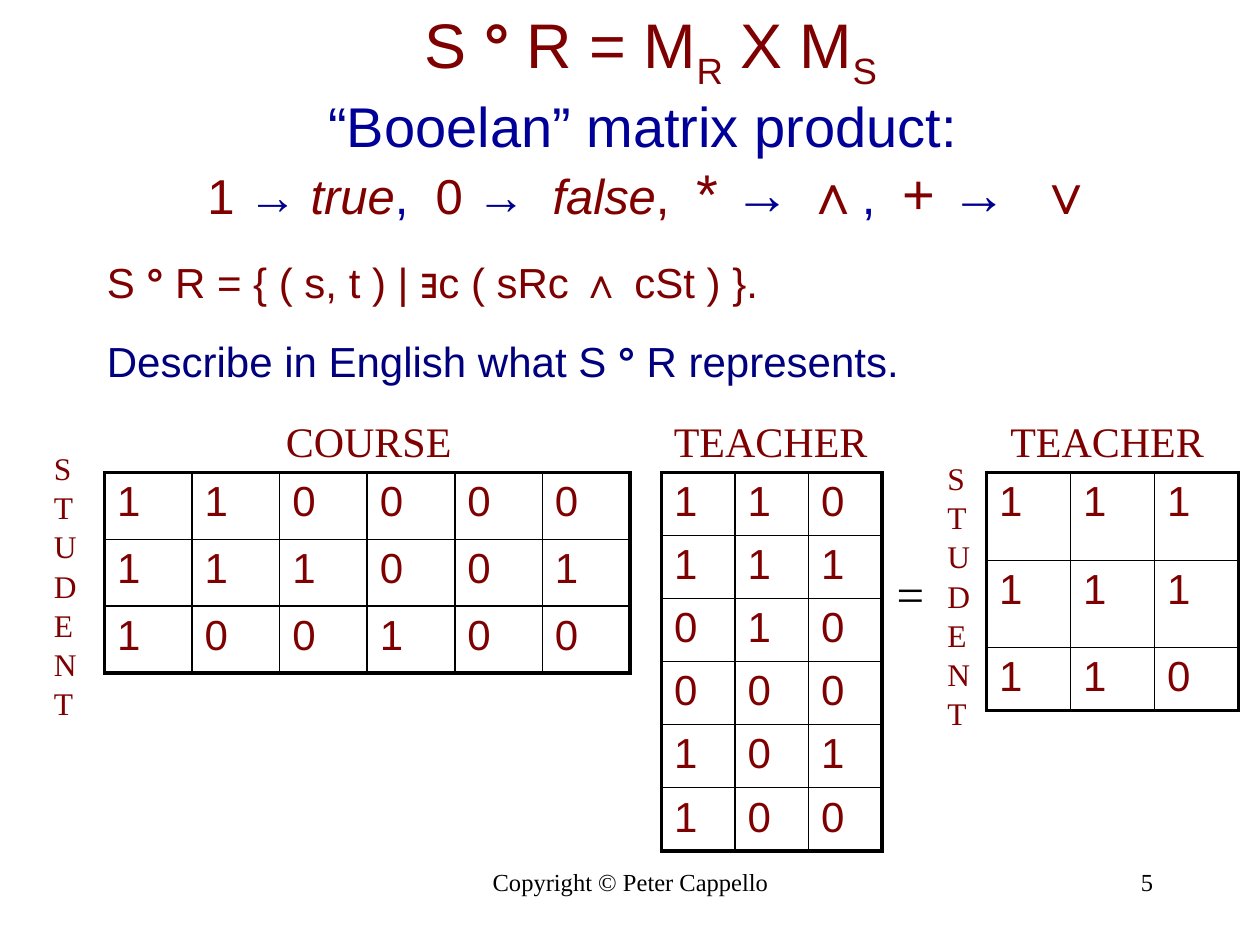
from lxml.etree import SubElement
from pptx import Presentation
from pptx.dml.color import RGBColor
from pptx.enum.text import MSO_ANCHOR, PP_ALIGN
from pptx.oxml.ns import qn
from pptx.util import Inches, Pt

MAROON, DARK_RED = "7F0000", "800000"
BLUE, ARROW_BLUE, NAVY, BLACK = "000099", "000090", "00007F", "000000"
SANS, SERIF = "Arial", "Times New Roman"
THICK, THIN = 2.25, 1


def color(hex_text):
    return RGBColor.from_string(hex_text)


def style_run(run, size, font, hex_color, bold=False, italic=False):
    run.font.size = Pt(size)
    run.font.name = font
    run.font.color.rgb = color(hex_color)
    run.font.bold = bold
    run.font.italic = italic


def add_styled_run(paragraph, text, size, hex_color, marks=""):
    """Marks: b bold, i italic, s subscript."""
    run = paragraph.add_run()
    run.text = text
    style_run(run, size, SANS, hex_color, "b" in marks, "i" in marks)
    if "s" in marks:
        run.font._element.set("baseline", "-25000")


def add_text_box(slide, left, top, width, height, wrap=True):
    box = slide.shapes.add_textbox(Inches(left), Inches(top), Inches(width), Inches(height))
    box.text_frame.word_wrap = wrap
    return box.text_frame


def add_label(slide, box, text, size, hex_color=MAROON, alignment=PP_ALIGN.LEFT,
              wrap=False, line_spacing=None):
    text_frame = add_text_box(slide, *box, wrap=wrap)
    text_frame.text = text
    for paragraph in text_frame.paragraphs:
        paragraph.alignment = alignment
        paragraph.line_spacing = line_spacing
        style_run(paragraph.runs[0], size, SERIF, hex_color)


def add_title(slide, left, top, width, height):
    lines = [
        [("S ", 36, MAROON), ("° ", 36, MAROON, "b"), ("R = M", 36, MAROON),
         ("R", 36, MAROON, "s"), (" X M", 36, MAROON), ("S", 36, MAROON, "s")],
        [("“Booelan” matrix product: ", 32, BLUE)],
        [("1 ", 28, DARK_RED), ("→ ", 28, ARROW_BLUE, "b"),
         ("true", 28, DARK_RED, "i"), (",  ", 28, BLUE),
         ("0 ", 28, DARK_RED), ("→  ", 28, ARROW_BLUE, "b"),
         ("false", 28, DARK_RED, "i"), (",  ", 28, DARK_RED),
         ("* ", 32, DARK_RED), ("→ ", 32, ARROW_BLUE, "b"),
         ("∧", 32, DARK_RED, "b"), (",  ", 28, "00009F"),
         ("+ ", 32, DARK_RED), ("→  ", 32, ARROW_BLUE, "b"),
         ("∨", 32, DARK_RED, "b")],
    ]
    text_frame = add_text_box(slide, left, top, width, height)
    text_frame.vertical_anchor = MSO_ANCHOR.MIDDLE
    paragraph = text_frame.paragraphs[0]
    paragraph.alignment = PP_ALIGN.CENTER
    for index, line in enumerate(lines):
        if index:
            paragraph.add_line_break()
        for run in line:
            add_styled_run(paragraph, *run)


def add_definition(slide, left, top, width, height):
    statements = [
        (MAROON, [("S ",), ("° ", "b"), ("R = { ( s, t ) | ",), ("∃", "b"),
                  ("c ( sRc ",), ("∧ ", "b"), ("cSt ) }.",)]),
        (NAVY, [("Describe in English what S ",), ("° ", "b"), ("R represents.",)]),
    ]
    text_frame = add_text_box(slide, left, top, width, height)
    for index, (hex_color, runs) in enumerate(statements):
        paragraph = text_frame.add_paragraph() if index else text_frame.paragraphs[0]
        paragraph.line_spacing = 1.4
        paragraph.space_before = Pt(4.8)
        for text, *marks in runs:
            add_styled_run(paragraph, text, 24, hex_color, *marks)


def set_borders(cell, widths):
    """Widths in points, in the order left, right, top, bottom."""
    properties = cell._tc.get_or_add_tcPr()
    for side, width in zip("LRTB", widths):
        line = SubElement(properties, qn(f"a:ln{side}"), w=str(Pt(width)))
        fill = SubElement(line, qn("a:solidFill"))
        SubElement(fill, qn("a:srgbClr"), val=BLACK)


def add_matrix(slide, left, top, width, row_heights, rows):
    """Rows are strings of digits; the outer frame is thick, inner lines thin."""
    row_count, column_count = len(rows), len(rows[0])
    frame = slide.shapes.add_table(row_count, column_count, Inches(left), Inches(top),
                                   Inches(width), Inches(sum(row_heights)))
    table = frame.table
    table.first_row = table.horz_banding = False
    for row, height in zip(table.rows, row_heights):
        row.height = Inches(height)
    for row_index, digits in enumerate(rows):
        for column_index, digit in enumerate(digits):
            cell = table.cell(row_index, column_index)
            cell.text = digit
            style_run(cell.text_frame.paragraphs[0].runs[0], 24, SANS, MAROON)
            on_edge = (column_index == 0, column_index == column_count - 1,
                       row_index == 0, row_index == row_count - 1)
            set_borders(cell, [THICK if edge else THIN for edge in on_edge])
            cell.fill.background()


def add_product(slide, top):
    """Two matrices and their product, with headings above and row labels beside."""
    matrices = [
        (0.83, 4.17, [0.53] * 3, ["110000", "111001", "100100"]),
        (5.25, 1.75, [0.5] * 6, ["110", "111", "010", "000", "101", "100"]),
        (7.83, 2, [0.7, 0.69, 0.5], ["111", "111", "110"]),
    ]
    for left, width, row_heights, rows in matrices:
        add_matrix(slide, left, top, width, row_heights, rows)
    for left, width, heading in [(2.17, 1.52, "COURSE"), (5.25, 1.74, "TEACHER"),
                                 (7.92, 1.74, "TEACHER")]:
        add_label(slide, (left, top - 0.5, width, 0.5), heading, 24)
    for left, offset in [(0.33, -0.25), (7.42, -0.17)]:
        add_label(slide, (left, top + offset, 0.38, 2.2), "\n".join("STUDENT"), 18,
                  line_spacing=1.04)
    add_label(slide, (6.92, top + 0.67, 0.52, 0.57), " =", 28, BLACK)


def add_footer(slide, top, height):
    add_label(slide, (3.42, top, 3.17, height), "Copyright © Peter Cappello", 14, BLACK,
              PP_ALIGN.CENTER, wrap=True)
    add_label(slide, (7.17, top, 2.08, height), "5", 14, BLACK, PP_ALIGN.RIGHT, wrap=True)


def main():
    presentation = Presentation()
    presentation.slide_width = Inches(10)
    presentation.slide_height = Inches(7.5)
    slide = presentation.slides.add_slide(presentation.slide_layouts[6])
    add_footer(slide, 6.83, 0.5)
    add_title(slide, 0.75, 0.17, 8.83, 1.5)
    add_definition(slide, 0.75, 1.83, 8.08, 4.83)
    add_product(slide, 3.75)
    presentation.save("out.pptx")


if __name__ == "__main__":
    main()
